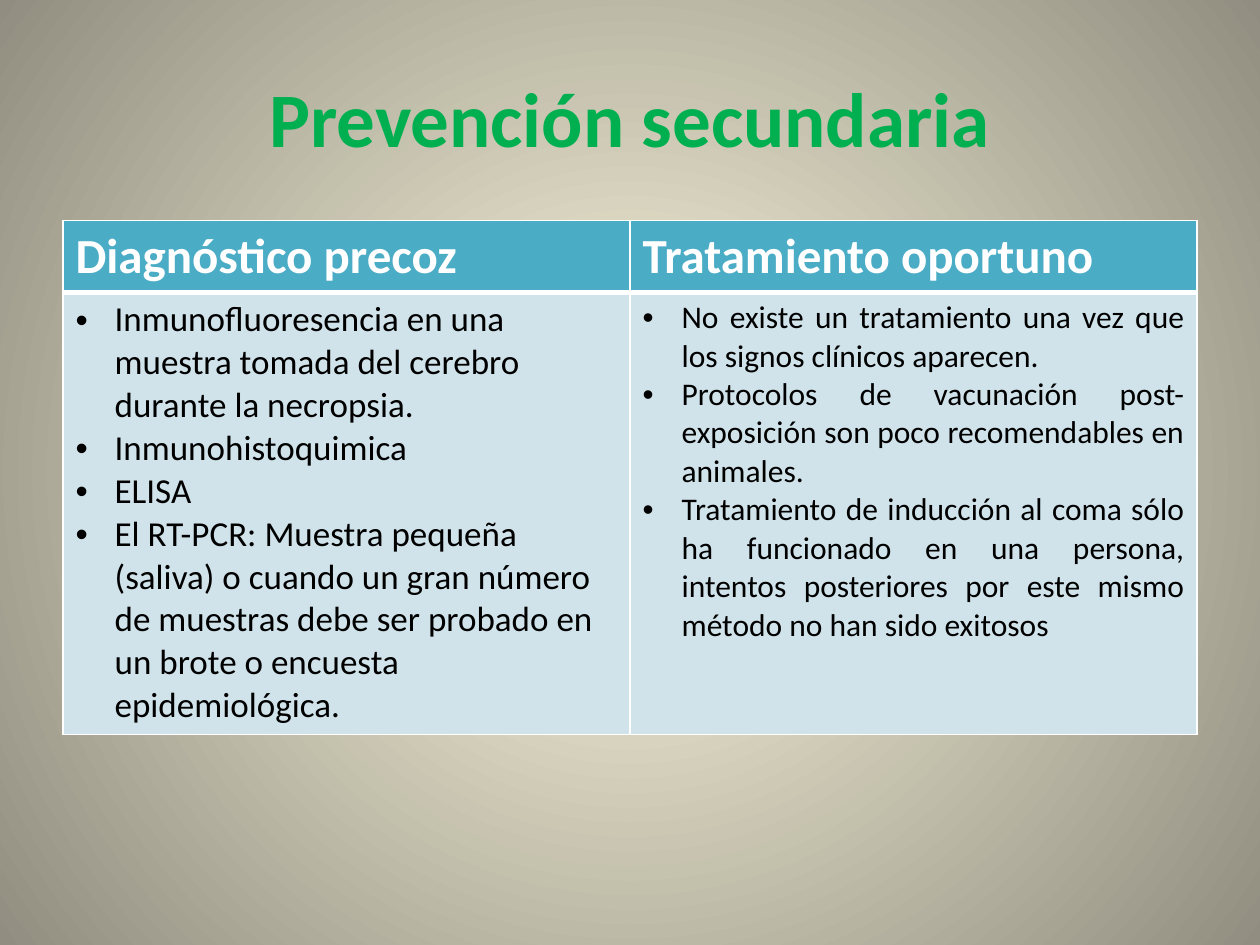
from dataclasses import dataclass
from typing import Optional

from lxml.etree import SubElement
from pptx import Presentation
from pptx.dml.color import RGBColor
from pptx.enum.text import MSO_ANCHOR, PP_ALIGN
from pptx.oxml.ns import qn
from pptx.util import Inches, Pt


@dataclass(frozen=True)
class Theme:
    font: str = "Calibri"
    title_color: str = "00B050"
    header_fill: str = "4BACC6"
    body_fill: str = "D0E3EA"
    white: str = "FFFFFF"
    black: str = "000000"
    glow: str = "FCF7DD"
    edge: str = "918E81"
    title_size: int = 44
    header_size: int = 28
    thin_line: int = 1
    thick_line: int = 3


@dataclass(frozen=True)
class Column:
    heading: str
    points: tuple[str, ...]
    size: int
    alignment: Optional[PP_ALIGN] = None


THEME = Theme()
WIDTH, HEIGHT = Inches(10), Inches(7.5)
MARGIN = int(WIDTH * 0.05)
CONTENT_WIDTH = WIDTH - 2 * MARGIN
ROW_HEIGHTS = (Inches(0.57), Inches(3.51))
BULLET_INDENT = Inches(0.31)

COLUMNS = (
    Column("Diagnóstico precoz", (
        "Inmunofluoresencia en una muestra tomada del cerebro durante la necropsia.",
        "Inmunohistoquimica",
        "ELISA",
        "El RT-PCR: Muestra pequeña (saliva) o cuando un gran número de muestras "
        "debe ser probado en un brote o encuesta epidemiológica.",
    ), 20),
    Column("Tratamiento oportuno", (
        "No existe un tratamiento una vez que los signos clínicos aparecen.",
        "Protocolos de vacunación post- exposición son poco recomendables en animales.",
        "Tratamiento de inducción al coma sólo ha funcionado en una persona, "
        "intentos posteriores por este mismo método no han sido exitosos",
    ), 18, PP_ALIGN.JUSTIFY),
)


def add_run(paragraph, text: str, size: int, color: str, bold: bool = False) -> None:
    run = paragraph.add_run()
    run.text = text
    run.font.name = THEME.font
    run.font.size = Pt(size)
    run.font.bold = bold
    run.font.color.rgb = RGBColor.from_string(color)


def add_bullet(paragraph) -> None:
    properties = paragraph._p.get_or_add_pPr()
    properties.set("marL", str(BULLET_INDENT))
    properties.set("indent", str(-BULLET_INDENT))
    SubElement(properties, qn("a:buFont"), typeface="Arial")
    SubElement(properties, qn("a:buChar"), char="•")


def style_cell(cell, fill: str, top: int, bottom: int) -> None:
    # Borders have to come before the fill in the cell properties
    properties = cell._tc.get_or_add_tcPr()
    sides = {"L": THEME.thin_line, "R": THEME.thin_line, "T": top, "B": bottom}
    for side, width in sides.items():
        line = SubElement(properties, qn(f"a:ln{side}"), w=str(Pt(width)))
        solid = SubElement(line, qn("a:solidFill"))
        SubElement(solid, qn("a:srgbClr"), val=THEME.white)
    cell.fill.solid()
    cell.fill.fore_color.rgb = RGBColor.from_string(fill)


def set_background(slide) -> None:
    fill = slide.background.fill
    fill.gradient()
    for stop, color in zip(fill.gradient_stops, (THEME.glow, THEME.edge)):
        stop.color.rgb = RGBColor.from_string(color)
    # Circular gradient from the centre of the slide
    gradient = next(slide.element.iter(qn("a:gradFill")))
    gradient.remove(gradient.find(qn("a:lin")))
    circle = SubElement(gradient, qn("a:path"), {"path": "circle"})
    SubElement(circle, qn("a:fillToRect"), {side: "50000" for side in "ltrb"})


def add_title(slide, text: str) -> None:
    box = slide.shapes.add_textbox(
        MARGIN, int(HEIGHT * 0.04), CONTENT_WIDTH, Inches(1.25))
    frame = box.text_frame
    frame.word_wrap = True
    frame.vertical_anchor = MSO_ANCHOR.MIDDLE
    paragraph = frame.paragraphs[0]
    paragraph.alignment = PP_ALIGN.CENTER
    add_run(paragraph, text, THEME.title_size, THEME.title_color, True)


def add_prevention_table(slide, columns: tuple[Column, ...]) -> None:
    table = slide.shapes.add_table(
        len(ROW_HEIGHTS), len(columns), MARGIN, Inches(1.75),
        CONTENT_WIDTH, sum(ROW_HEIGHTS)).table
    for row, height in zip(table.rows, ROW_HEIGHTS):
        row.height = height

    for index, column in enumerate(columns):
        # Heading
        header = table.cell(0, index)
        style_cell(header, THEME.header_fill, THEME.thin_line, THEME.thick_line)
        add_run(header.text_frame.paragraphs[0], column.heading,
                THEME.header_size, THEME.white, True)

        # Bulleted points
        body = table.cell(1, index)
        style_cell(body, THEME.body_fill, THEME.thick_line, THEME.thin_line)
        frame = body.text_frame
        for number, point in enumerate(column.points):
            paragraph = frame.add_paragraph() if number else frame.paragraphs[0]
            paragraph.alignment = column.alignment
            add_bullet(paragraph)
            add_run(paragraph, point, column.size, THEME.black)


def main() -> None:
    presentation = Presentation()
    presentation.slide_width, presentation.slide_height = WIDTH, HEIGHT
    slide = presentation.slides.add_slide(presentation.slide_layouts[6])
    set_background(slide)
    add_title(slide, "Prevención secundaria")
    add_prevention_table(slide, COLUMNS)
    presentation.save("out.pptx")


if __name__ == "__main__":
    main()
